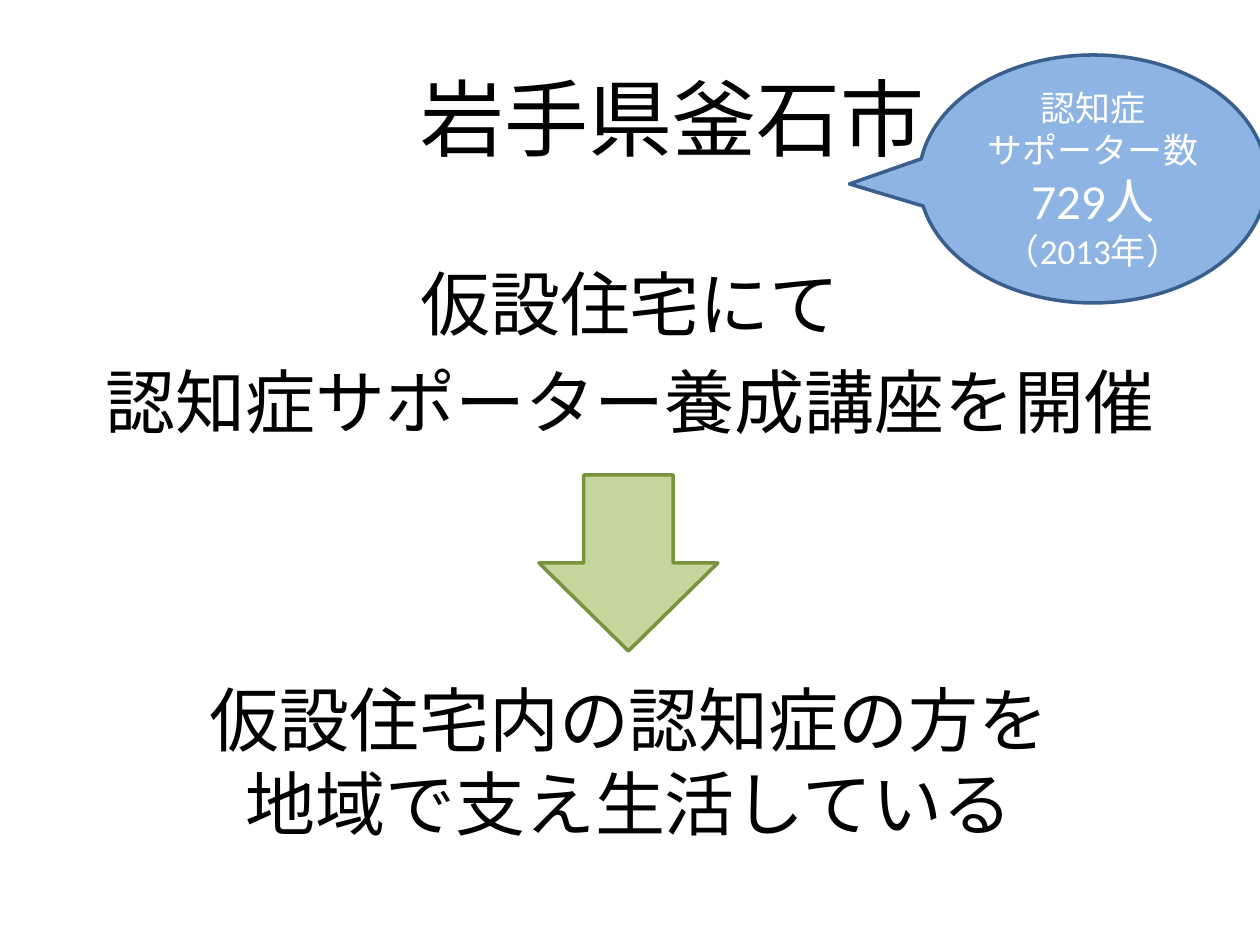
from pptx import Presentation
from pptx.dml.color import RGBColor
from pptx.enum.lang import MSO_LANGUAGE_ID as Language
from pptx.enum.shapes import MSO_SHAPE as Shape
from pptx.enum.text import MSO_ANCHOR as Anchor, MSO_AUTO_SIZE as AutoSize, PP_ALIGN as Align
from pptx.util import Inches, Pt

PX = Inches(1) // 126
FONT = "Calibri"
BLACK = RGBColor(0x00, 0x00, 0x00)
WHITE = RGBColor(0xFF, 0xFF, 0xFF)
GREEN = RGBColor(0xC3, 0xD6, 0x9B)
DARK_GREEN = RGBColor(0x77, 0x93, 0x3C)
BLUE = RGBColor(0x8E, 0xB4, 0xE3)
DARK_BLUE = RGBColor(0x3A, 0x5F, 0x8C)


def to_emu(box):
    return [length * PX for length in box]


def write_lines(text_frame, lines, color, gap=0):
    text_frame.word_wrap = True
    text_frame.text = "\n".join(text for text, size in lines)
    for index, (paragraph, (text, size)) in enumerate(zip(text_frame.paragraphs, lines)):
        paragraph.alignment = Align.CENTER
        if index and gap:
            paragraph.space_before = Pt(gap)
        for run in paragraph.runs:
            run.font.name = FONT
            run.font.size = Pt(size)
            run.font.color.rgb = color
            run.font.language_id = Language.JAPANESE


def add_text(slide, box, lines, gap=0, anchor=Anchor.TOP):
    text_frame = slide.shapes.add_textbox(*to_emu(box)).text_frame
    write_lines(text_frame, lines, BLACK, gap)
    text_frame.vertical_anchor = anchor
    return text_frame


def add_filled_shape(slide, kind, box, fill, line):
    shape = slide.shapes.add_shape(kind, *to_emu(box))
    shape.shadow.inherit = False
    shape.fill.solid()
    shape.fill.fore_color.rgb = fill
    shape.line.color.rgb = line
    shape.line.width = Pt(2)
    return shape


def add_callout(slide, box, tail, lines):
    callout = add_filled_shape(slide, Shape.OVAL_CALLOUT, box, BLUE, DARK_BLUE)
    callout.adjustments[0], callout.adjustments[1] = tail
    callout.text_frame.vertical_anchor = Anchor.MIDDLE
    write_lines(callout.text_frame, lines, WHITE)


def main():
    presentation = Presentation()
    presentation.slide_width = 1260 * PX
    presentation.slide_height = 945 * PX
    slide = presentation.slides.add_slide(presentation.slide_layouts[6])

    title = add_text(slide, (63, 38, 1134, 157), [("岩手県釜石市", 48)], anchor=Anchor.MIDDLE)
    title.margin_left = 97 * PX
    add_text(slide, (13, 254, 1234, 238),
             [("仮設住宅にて", 40), ("認知症サポーター養成講座を開催", 40)], gap=8)
    add_filled_shape(slide, Shape.DOWN_ARROW, (539, 475, 179, 176), GREEN, DARK_GREEN)
    add_callout(slide, (919, 55, 348, 248), (-0.7, 0.02),
                [("認知症", 20), ("サポーター数", 20), ("729人", 28), ("（2013年）", 20)])
    outcome = add_text(slide, (118, 670, 1022, 183),
                       [("仮設住宅内の認知症の方を", 40), ("地域で支え生活している", 40)])
    outcome.auto_size = AutoSize.SHAPE_TO_FIT_TEXT

    presentation.save("out.pptx")


if __name__ == "__main__":
    main()
